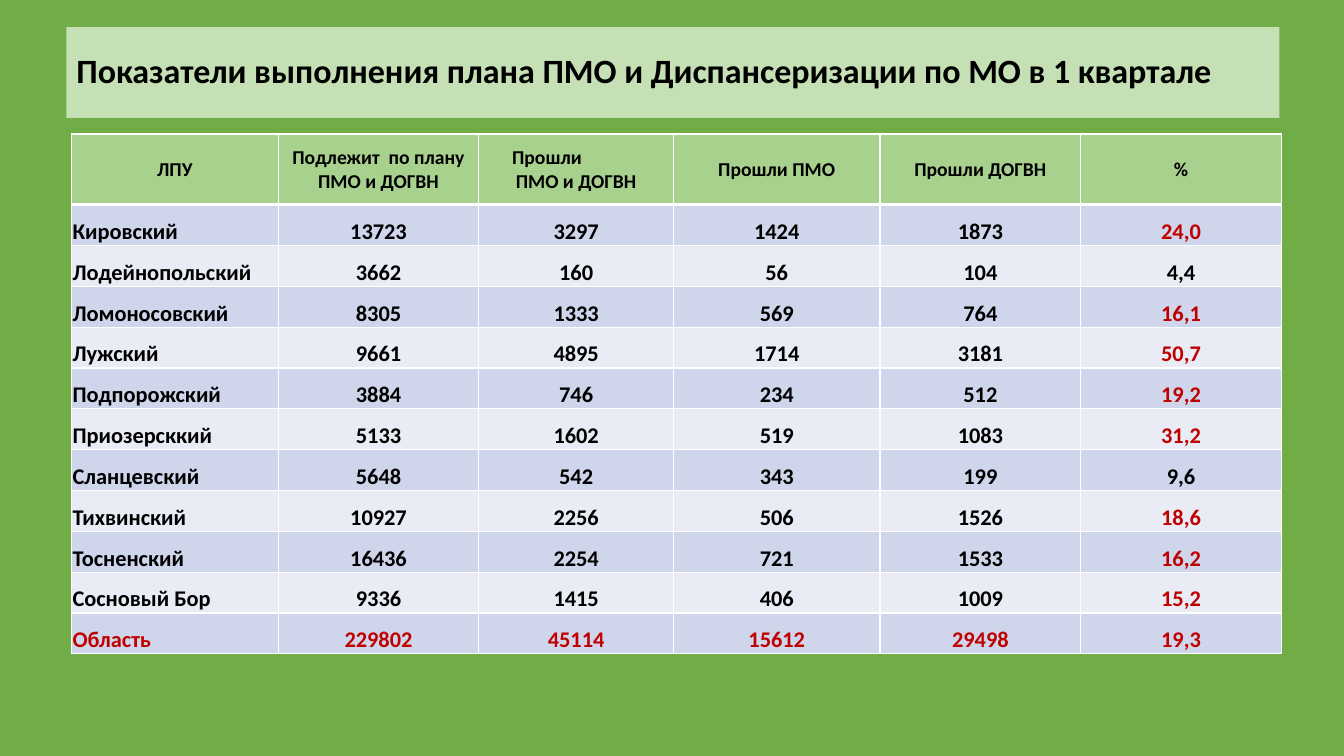
from dataclasses import dataclass

from lxml.etree import SubElement
from pptx import Presentation
from pptx.dml.color import RGBColor
from pptx.enum.shapes import MSO_SHAPE
from pptx.enum.text import MSO_ANCHOR, PP_ALIGN
from pptx.oxml.ns import qn
from pptx.util import Inches, Pt


@dataclass(frozen=True)
class Theme:
    font: str = "Calibri"
    background: str = "70AD47"
    title_fill: str = "C5E0B4"
    header_fill: str = "A9D18E"
    bands: tuple = ("CFD5EA", "E9EBF5")
    border: str = "FFFFFF"
    text: str = "000000"
    accent: str = "C00000"
    title_size: float = 24.3
    header_size: float = 14
    body_size: float = 16
    thin: float = 1
    thick: float = 3


THEME = Theme()
TITLE = "Показатели выполнения плана ПМО и Диспансеризации по МО в 1 квартале"
HEADERS = ("ЛПУ", "Подлежит  по плану ПМО и ДОГВН", "Прошли\nПМО и ДОГВН",
           "Прошли ПМО", "Прошли ДОГВН", "%")
DISTRICTS = (
    ("Кировский", "13723", "3297", "1424", "1873", "24,0"),
    ("Лодейнопольский", "3662", "160", "56", "104", "4,4"),
    ("Ломоносовский", "8305", "1333", "569", "764", "16,1"),
    ("Лужский", "9661", "4895", "1714", "3181", "50,7"),
    ("Подпорожский", "3884", "746", "234", "512", "19,2"),
    ("Приозерсккий", "5133", "1602", "519", "1083", "31,2"),
    ("Сланцевский", "5648", "542", "343", "199", "9,6"),
    ("Тихвинский", "10927", "2256", "506", "1526", "18,6"),
    ("Тосненский", "16436", "2254", "721", "1533", "16,2"),
    ("Сосновый Бор", "9336", "1415", "406", "1009", "15,2"),
)
REGION = ("Область", "229802", "45114", "15612", "29498", "19,3")
COLUMN_WIDTHS = (2.05, 1.99, 1.93, 2.05, 1.99, 1.99)
TABLE_HEIGHT = 5.16
HEADER_HEIGHT = 0.7
TARGET_PERCENT = 15


def paint(fill, color):
    fill.solid()
    fill.fore_color.rgb = RGBColor.from_string(color)


def format_text(frame, size, color, align):
    for para in frame.paragraphs:
        para.alignment = align
        for span in para.runs:
            span.font.name = THEME.font
            span.font.size = Pt(size)
            span.font.bold = True
            span.font.color.rgb = RGBColor.from_string(color)


def add_title(page):
    box = page.shapes.add_shape(MSO_SHAPE.RECTANGLE, Inches(0.66), Inches(0.27),
                                Inches(12.03), Inches(0.9))
    box.shadow.inherit = False
    box.line.fill.background()
    paint(box.fill, THEME.title_fill)
    frame = box.text_frame
    frame.word_wrap = True
    frame.vertical_anchor = MSO_ANCHOR.MIDDLE
    frame.text = TITLE
    frame.paragraphs[0].line_spacing = 0.9
    format_text(frame, THEME.title_size, THEME.text, PP_ALIGN.LEFT)


def add_borders(cell, top, bottom):
    properties = cell._tc.get_or_add_tcPr()
    widths = {"a:lnL": THEME.thin, "a:lnR": THEME.thin, "a:lnT": top, "a:lnB": bottom}
    for tag, width in widths.items():
        line = SubElement(properties, qn(tag), w=str(Pt(width)))
        solid = SubElement(line, qn("a:solidFill"))
        SubElement(solid, qn("a:srgbClr"), val=THEME.border)


def fill_cell(cell, text, fill, size, color, align, anchor, top, bottom):
    cell.margin_left = cell.margin_right = cell.margin_top = Inches(0.01)
    cell.margin_bottom = 0
    cell.vertical_anchor = anchor
    add_borders(cell, top, bottom)
    paint(cell.fill, fill)
    cell.text_frame.text = text
    format_text(cell.text_frame, size, color, align)


def fill_header(table):
    for column, text in enumerate(HEADERS):
        fill_cell(table.cell(0, column), text, THEME.header_fill, THEME.header_size,
                  THEME.text, PP_ALIGN.CENTER, MSO_ANCHOR.MIDDLE,
                  THEME.thin, THEME.thick)
    first_line = table.cell(0, 2).text_frame.paragraphs[0]
    first_line.alignment = PP_ALIGN.LEFT
    first_line._p.get_or_add_pPr().set("marL", str(Inches(0.32)))


def text_color(values, column):
    percent = float(values[-1].replace(",", "."))
    on_target = column == len(values) - 1 and percent >= TARGET_PERCENT
    return THEME.accent if values is REGION or on_target else THEME.text


def fill_row(table, row, values):
    for column, text in enumerate(values):
        fill_cell(table.cell(row, column), text, THEME.bands[(row - 1) % 2],
                  THEME.body_size, text_color(values, column),
                  PP_ALIGN.CENTER if column else PP_ALIGN.LEFT, MSO_ANCHOR.BOTTOM,
                  THEME.thick if row == 1 else THEME.thin, THEME.thin)


def add_results(page):
    rows = (*DISTRICTS, REGION)
    table = page.shapes.add_table(len(rows) + 1, len(HEADERS), Inches(0.71), Inches(1.33),
                                  Inches(sum(COLUMN_WIDTHS)), Inches(TABLE_HEIGHT)).table
    for column, width in zip(table.columns, COLUMN_WIDTHS):
        column.width = Inches(width)
    table.rows[0].height = Inches(HEADER_HEIGHT)
    fill_header(table)
    for row, values in enumerate(rows, start=1):
        table.rows[row].height = Inches((TABLE_HEIGHT - HEADER_HEIGHT) / len(rows))
        fill_row(table, row, values)


def main():
    deck = Presentation()
    deck.slide_width, deck.slide_height = Inches(13.33), Inches(7.5)
    page = deck.slides.add_slide(deck.slide_layouts[6])
    paint(page.background.fill, THEME.background)
    add_title(page)
    add_results(page)
    deck.save("out.pptx")


if __name__ == "__main__":
    main()
